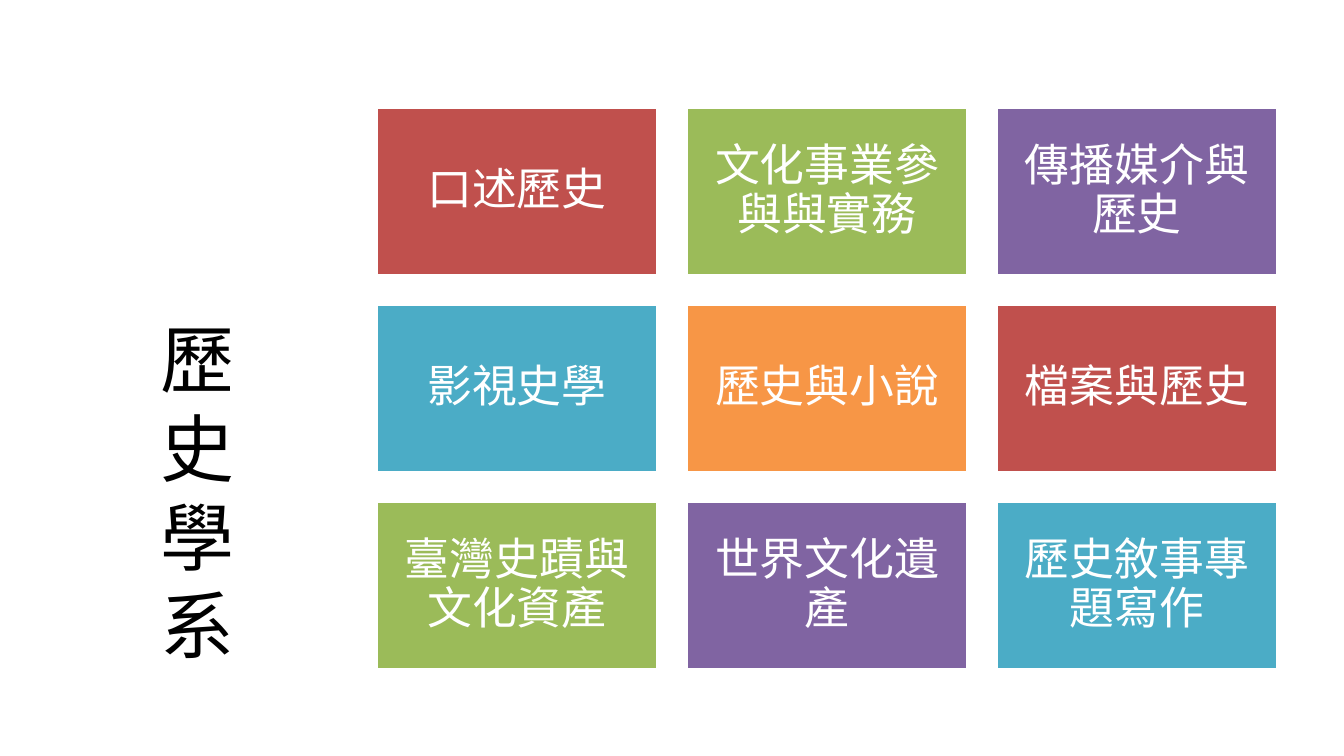
from dataclasses import dataclass

from pptx import Presentation
from pptx.dml.color import RGBColor
from pptx.enum.shapes import MSO_SHAPE
from pptx.enum.text import MSO_ANCHOR, MSO_AUTO_SIZE, PP_ALIGN
from pptx.util import Pt


@dataclass(frozen=True)
class Theme:
    red: str = "C0504D"
    green: str = "9BBB59"
    purple: str = "8064A2"
    teal: str = "4BACC6"
    orange: str = "F79646"
    white: str = "FFFFFF"
    black: str = "000000"
    title_font: str = "TeX Gyre Bonum"
    tile_font: str = "Calibri"
    title_size: float = 39.6
    tile_size: float = 24


theme = Theme()
EMU_PER_PX = 914400 / 134.4


def px(length):
    return round(length * EMU_PER_PX)


def write(box, text, *, font, size, color, align, anchor, spacing=1.0, inset=13):
    frame = box.text_frame
    frame.word_wrap = True
    frame.auto_size = MSO_AUTO_SIZE.NONE
    frame.vertical_anchor = anchor
    frame.margin_left = frame.margin_right = px(inset)
    frame.margin_top = frame.margin_bottom = px(inset)
    para = frame.paragraphs[0]
    para.alignment = align
    para.line_spacing = spacing
    span = para.add_run()
    span.text = text
    span.font.name = font
    span.font.size = Pt(size)
    span.font.color.rgb = RGBColor.from_string(color)


# Deck and page
deck = Presentation()
deck.slide_width, deck.slide_height = px(1344), px(756)
page = deck.slides.add_slide(deck.slide_layouts[5])

# Department name, stacked vertically
title = page.shapes.title
title.left, title.top, title.width, title.height = px(153), px(307), px(127), px(433)
write(title, "歷史學系", font=theme.title_font, size=theme.title_size,
      color=theme.black, align=PP_ALIGN.LEFT, anchor=MSO_ANCHOR.TOP, inset=7)
title.text_frame._txBody.bodyPr.set("vert", "wordArtVertRtl")

# Course tiles, three to a row
courses = [
    ("口述歷史", theme.red),
    ("文化事業參與與實務", theme.green),
    ("傳播媒介與歷史", theme.purple),
    ("影視史學", theme.teal),
    ("歷史與小說", theme.orange),
    ("檔案與歷史", theme.red),
    ("臺灣史蹟與文化資產", theme.green),
    ("世界文化遺產", theme.purple),
    ("歷史敘事專題寫作", theme.teal),
]
COLUMNS = 3
LEFT, TOP = 376, 107
WIDTH, HEIGHT = 282, 169
GAP = 28

for index, (course, color) in enumerate(courses):
    row, column = divmod(index, COLUMNS)
    tile = page.shapes.add_shape(
        MSO_SHAPE.RECTANGLE,
        px(LEFT + column * (WIDTH + GAP)), px(TOP + row * (HEIGHT + GAP)),
        px(WIDTH), px(HEIGHT))
    tile.shadow.inherit = False
    tile.fill.solid()
    tile.fill.fore_color.rgb = RGBColor.from_string(color)
    tile.line.color.rgb = RGBColor.from_string(theme.white)
    tile.line.width = Pt(2)
    write(tile, course, font=theme.tile_font, size=theme.tile_size,
          color=theme.white, align=PP_ALIGN.CENTER, anchor=MSO_ANCHOR.MIDDLE,
          spacing=0.9)

deck.save("out.pptx")
